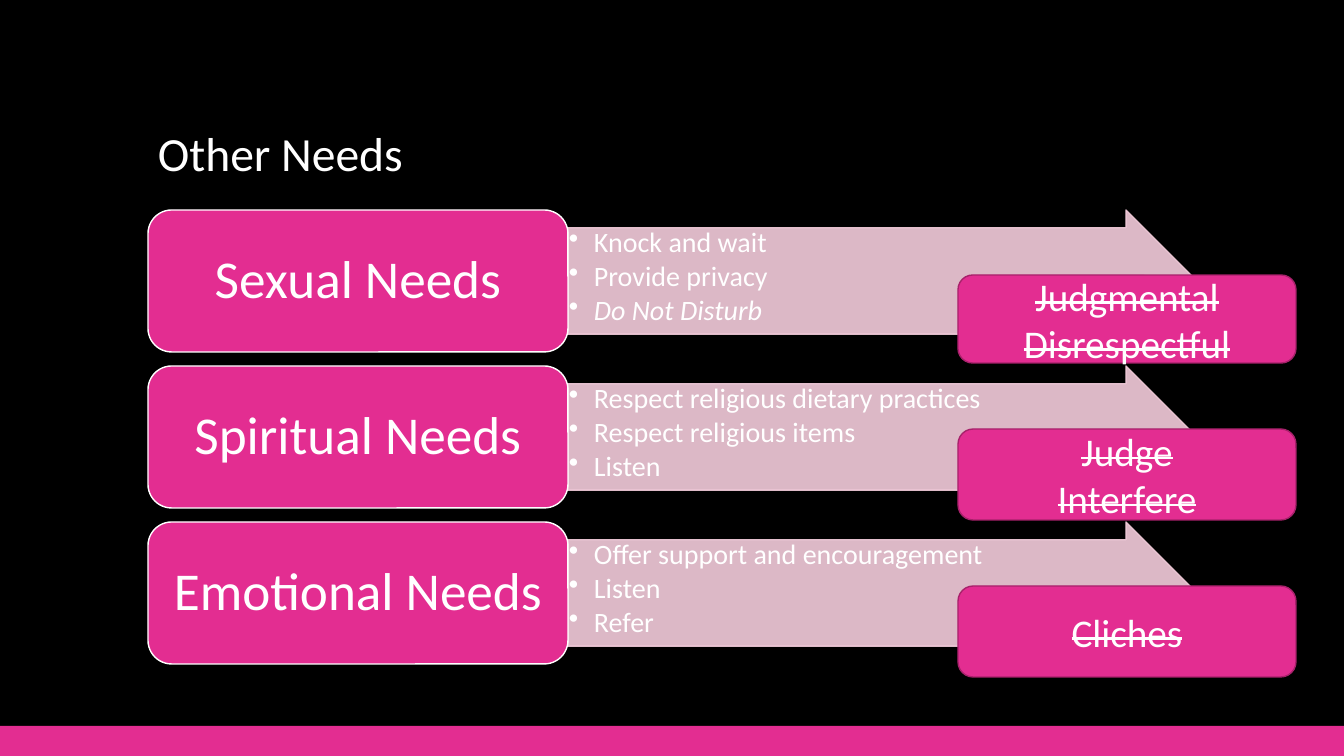
from lxml.etree import SubElement
from pptx import Presentation
from pptx.dml.color import RGBColor
from pptx.enum.shapes import MSO_SHAPE as SHAPE
from pptx.enum.text import MSO_ANCHOR as ANCHOR, MSO_AUTO_SIZE as AUTO, PP_ALIGN as ALIGN
from pptx.oxml.ns import qn
from pptx.util import Pt

EMU_PER_PX = 914400 / 100.8
BLACK, WHITE = "000000", "FFFFFF"
PINK, DARK_PINK, PALE_PINK = "E32D91", "A8216B", "F4CDDC"
FONT = "Calibri"
ROW_PITCH = 156
NEEDS = [
    ("Sexual Needs", ["Knock and wait", "Provide privacy", "Do Not Disturb"],
     ["Judgmental", "Disrespectful"], (275, 88)),
    ("Spiritual Needs",
     ["Respect religious dietary practices", "Respect religious items", "Listen"],
     ["Judge", "Interfere"], (429, 91)),
    ("Emotional Needs", ["Offer support and encouragement", "Listen", "Refer"],
     ["Cliches"], (586, 91)),
]


def px(n):
    """Turn a length in px into EMU."""
    return round(n * EMU_PER_PX)


def paint(fmt, color):
    """Give a fill a solid hex colour."""
    fmt.solid()
    fmt.fore_color.rgb = RGBColor.from_string(color)


def add_box(slide, kind, box, fill, line=None):
    """Add a flat preset shape in the given box."""
    sp = slide.shapes.add_shape(kind, *map(px, box))
    sp.shadow.inherit = False
    paint(sp.fill, fill)
    if line:
        paint(sp.line.fill, line)
        sp.line.width = Pt(1)
    else:
        sp.line.fill.background()
    return sp


def write(sp, lines, size, align, anchor, insets=(10, 5), spacing=None):
    """Fill a shape with one styled paragraph per line and return them."""
    tf = sp.text_frame
    tf.word_wrap = True
    tf.auto_size = AUTO.NONE
    tf.vertical_anchor = anchor
    tf.margin_left = tf.margin_right = px(insets[0])
    tf.margin_top = tf.margin_bottom = px(insets[1])
    tf.text = "\n".join(lines)
    for p in tf.paragraphs:
        p.alignment = align
        p.line_spacing = spacing
        p.font.name = FONT
        p.font.size = Pt(size)
        p.font.color.rgb = RGBColor.from_string(WHITE)
    return tf.paragraphs


def make_translucent(sp, percent):
    """Set the opacity of a shape's fill and line."""
    for color in sp._element.spPr.iter(qn("a:srgbClr")):
        SubElement(color, qn("a:alpha")).set("val", str(percent * 1000))


def add_bullet(p, indent):
    """Give a paragraph a round bullet and a hanging indent."""
    pPr = p._p.get_or_add_pPr()
    pPr.set("marL", str(px(indent)))
    pPr.set("indent", str(-px(indent)))
    bullet = pPr.makeelement(qn("a:buChar"), {"char": "•"})
    pPr.find(qn("a:defRPr")).addprevious(bullet)


def add_title(slide, text, box):
    """Place and format the title placeholder."""
    sp = slide.shapes.title
    sp.left, sp.top, sp.width, sp.height = map(px, box)
    write(sp, [text], 34, ALIGN.LEFT, ANCHOR.BOTTOM, spacing=0.9)


def add_need(slide, name, actions, box):
    """Draw a labelled need with an arrow of actions beside it."""
    left, top, width, height = box
    label_width = round(width * 0.4)
    arrow = add_box(slide, SHAPE.RIGHT_ARROW,
                    (left + label_width, top, width - label_width, height),
                    PALE_PINK, PALE_PINK)
    arrow.adjustments[0] = 0.75
    make_translucent(arrow, 90)
    for p in write(arrow, actions, 20, ALIGN.LEFT, ANCHOR.TOP, (1, 1), 0.9):
        p.space_after = Pt(2.5)
        add_bullet(p, 25)
        p.font.italic = p.text == "Do Not Disturb"
    label = add_box(slide, SHAPE.ROUNDED_RECTANGLE,
                    (left, top, label_width, height), PINK, WHITE)
    write(label, [name], 38, ALIGN.CENTER, ANCHOR.MIDDLE, (16, 8), 0.9)


def add_avoid(slide, words, box):
    """Draw a badge of struck-out behaviours."""
    badge = add_box(slide, SHAPE.ROUNDED_RECTANGLE, box, PINK, DARK_PINK)
    for p in write(badge, words, 28, ALIGN.CENTER, ANCHOR.MIDDLE):
        for r in p.runs:
            r._r.get_or_add_rPr().set("strike", "sngStrike")


def main():
    """Build the slide and save it."""
    prs = Presentation()
    prs.slide_width, prs.slide_height = px(1344), px(756)
    slide = prs.slides.add_slide(prs.slide_layouts[5])
    paint(slide.background.fill, BLACK)
    add_box(slide, SHAPE.RECTANGLE, (0, 726, 1344, 30), PINK)
    add_title(slide, "Other Needs", (148, 51, 1048, 136))
    for i, (name, actions, _, _) in enumerate(NEEDS):
        add_need(slide, name, actions, (148, 210 + i * ROW_PITCH, 1049, 142))
    for _, _, words, (top, height) in NEEDS:
        add_avoid(slide, words, (958, top, 338, height))
    prs.save("out.pptx")


if __name__ == "__main__":
    main()
